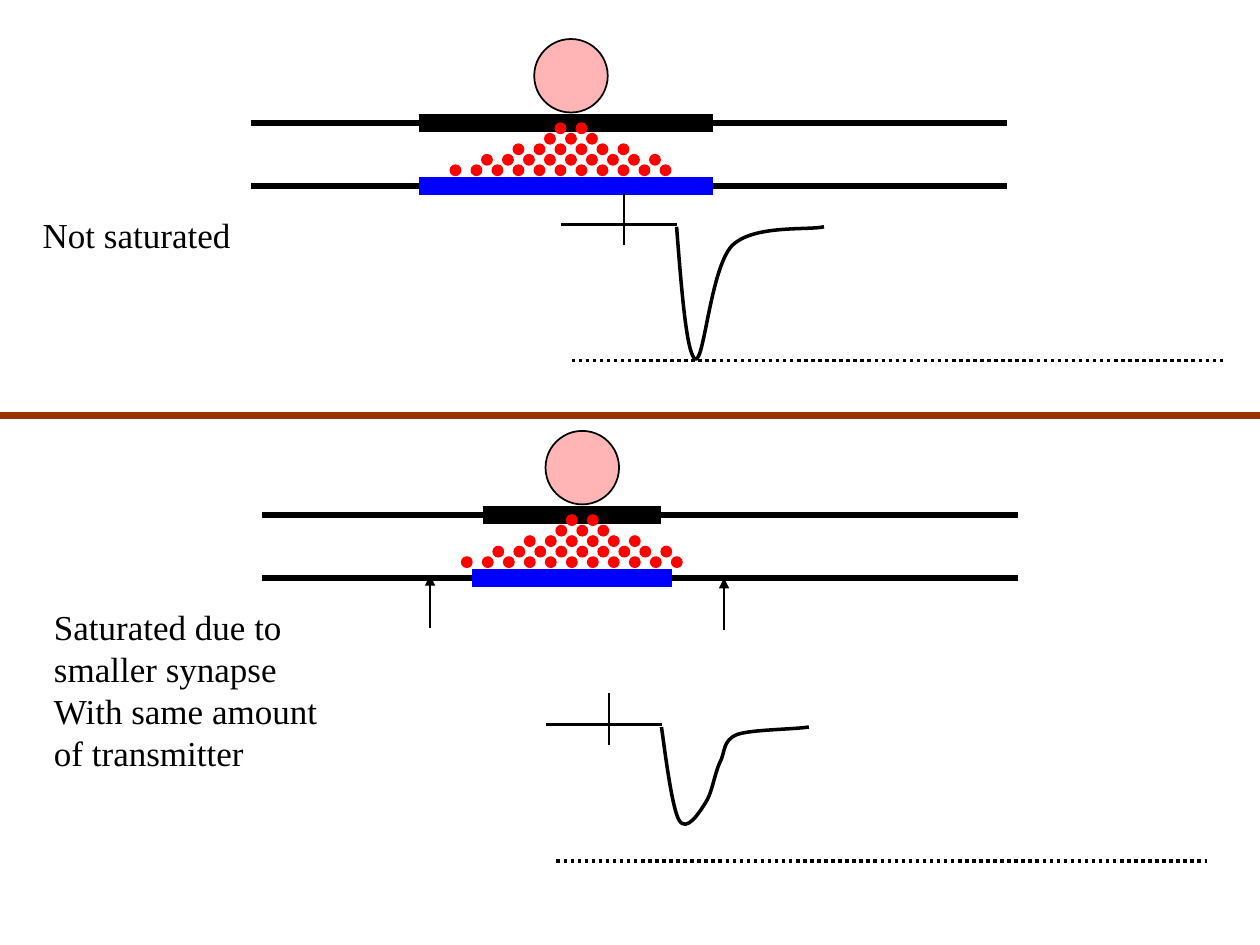
from lxml.etree import SubElement
from pptx import Presentation
from pptx.dml.color import RGBColor
from pptx.enum.dml import MSO_LINE
from pptx.enum.shapes import MSO_CONNECTOR, MSO_SHAPE
from pptx.enum.text import MSO_AUTO_SIZE
from pptx.oxml.ns import qn
from pptx.util import Inches, Pt

BLACK = RGBColor(0x00, 0x00, 0x00)
BLUE = RGBColor(0x00, 0x00, 0xFF)
RED = RGBColor(0xFF, 0x00, 0x00)
BROWN = RGBColor(0x99, 0x33, 0x00)
FONT = "Times New Roman"
UNIT = 1 / 12
DOT_ROWS = [(10, 12), (9, 13), (6, 16), (3, 19), (0, 20)]
DEEP_CURVE = [(0, 0.02), (0.04, 0.53), (0.08, 1.04), (0.15, 1.07), (0.22, 1.09),
              (0.27, 0.35), (0.44, 0.17), (0.61, 0), (1.05, 0.05), (1.17, 0.02)]
SHALLOW_CURVE = [(0, 0.02), (0.02, 0.15), (0.08, 0.66), (0.14, 0.76),
                 (0.2, 0.86), (0.3, 0.7), (0.35, 0.62), (0.4, 0.55),
                 (0.42, 0.4), (0.46, 0.31), (0.51, 0.22), (0.48, 0.13),
                 (0.6, 0.08), (0.71, 0.04), (1.05, 0.04), (1.17, 0.02)]


def place(box, col, row):
    """Turn a grid position inside a box into slide lengths."""
    left, top = box
    return Inches(left + col * UNIT), Inches(top + row * UNIT)


def add_line(s, start, end, width, color=BLACK, dash=None, arrow=False):
    """Draw a straight connector between two points."""
    line = s.shapes.add_connector(MSO_CONNECTOR.STRAIGHT, *start, *end)
    line.line.color.rgb = color
    line.line.width = Pt(width)
    if dash:
        line.line.dash_style = dash
    if arrow:
        SubElement(line.line._get_or_add_ln(), qn("a:tailEnd"), type="triangle")
    SubElement(line._element.spPr, qn("a:effectLst"))
    return line


def add_circle(s, corner, units, line_color, line_width, alpha=None):
    """Draw a red circle, optionally translucent."""
    size = Inches(units * UNIT)
    sp = s.shapes.add_shape(MSO_SHAPE.OVAL, *corner, size, size)
    sp.shadow.inherit = False
    sp.fill.solid()
    sp.fill.fore_color.rgb = RED
    if alpha:
        color = sp._element.spPr.find(qn("a:solidFill"))[0]
        SubElement(color, qn("a:alpha"), val=str(alpha * 1000))
    sp.line.color.rgb = line_color
    sp.line.width = Pt(line_width)
    return sp


def add_text(s, corner, width, height, text, size=20, color=BLACK):
    """Add an unwrapped text box with one paragraph for each line."""
    sp = s.shapes.add_textbox(*corner, Inches(width), Inches(height))
    tf = sp.text_frame
    tf.word_wrap = False
    tf.auto_size = MSO_AUTO_SIZE.SHAPE_TO_FIT_TEXT
    tf.text = text
    for p in tf.paragraphs:
        p.font.name = FONT
        p.font.size = Pt(size)
        p.font.color.rgb = color
    return sp


def add_curve(s, box, points):
    """Draw an open cubic curve through offsets from the box corner."""
    left, top = box
    start, *rest = [(Inches(left + x), Inches(top + y)) for x, y in points]
    builder = s.shapes.build_freeform(*start)
    builder.add_line_segments(rest, close=False)
    sp = builder.convert_to_shape()
    sp.shadow.inherit = False
    sp.fill.background()
    sp.line.color.rgb = BLACK
    sp.line.width = Pt(2)
    outline = next(sp._element.iter(qn("a:path")))
    segments = outline.findall(qn("a:lnTo"))
    for i in range(0, len(segments), 3):
        curve = SubElement(outline, qn("a:cubicBezTo"))
        for segment in segments[i:i + 3]:
            curve.append(segment[0])
            outline.remove(segment)
    return sp


def add_synapse(s, box, release, receptor, label, label_size):
    """Draw two membranes, the vesicle, the transmitter and a label."""
    for row in (8, 14):
        add_line(s, place(box, 0, row), place(box, 72, row), 3)
    for row, (first, last), color in ((14, receptor, BLUE), (8, release, BLACK)):
        add_line(s, place(box, first, row), place(box, last, row), 10, color)
    add_circle(s, place(box, 27, 0), 7, BLACK, 1, alpha=29)
    for row, (first, last) in enumerate(DOT_ROWS, start=8):
        for col in range(first, last + 1, 2):
            add_circle(s, place(box, 19 + col, row), 1, RED, 0.75)
    add_text(s, place(box, -21, 16), *label_size, label)


def add_response(s, box, points):
    """Draw a current trace whose onset is the box corner."""
    add_curve(s, box, points)
    add_line(s, place(box, 0, 0), place(box, -11, 0), 2)
    add_line(s, place(box, -5, -3), place(box, -5, 2), 1.5)
    add_line(s, place(box, -10, 13), place(box, 52, 13), 2,
             dash=MSO_LINE.ROUND_DOT)


def add_edge_arrows(s, box):
    """Point at the former edges of the synapse."""
    for col, row in ((16, 13.75), (44, 14)):
        add_line(s, place(box, col, row + 5), place(box, col, row), 1.5, arrow=True)


def main():
    """Build the slide comparing the two synapses."""
    prs = Presentation()
    prs.slide_width, prs.slide_height = Inches(10), Inches(7.5)
    s = prs.slides.add_slide(prs.slide_layouts[6])
    small = (2.08, 3.42)
    add_synapse(s, small, (21, 38), (20, 39),
                "Saturated due to\nsmaller synapse\nWith same amount\nof transmitter",
                (2.67, 1.43))
    add_response(s, (5.25, 5.75), SHALLOW_CURVE)
    add_edge_arrows(s, small)
    add_synapse(s, (1.99, 0.31), (16, 44), (16, 44), "Not saturated", (1.99, 0.43))
    add_response(s, (5.37, 1.78), DEEP_CURVE)
    middle = Inches(3.3)
    add_line(s, (0, middle), (prs.slide_width, middle), 4, BROWN)
    prs.save("out.pptx")


if __name__ == "__main__":
    main()
